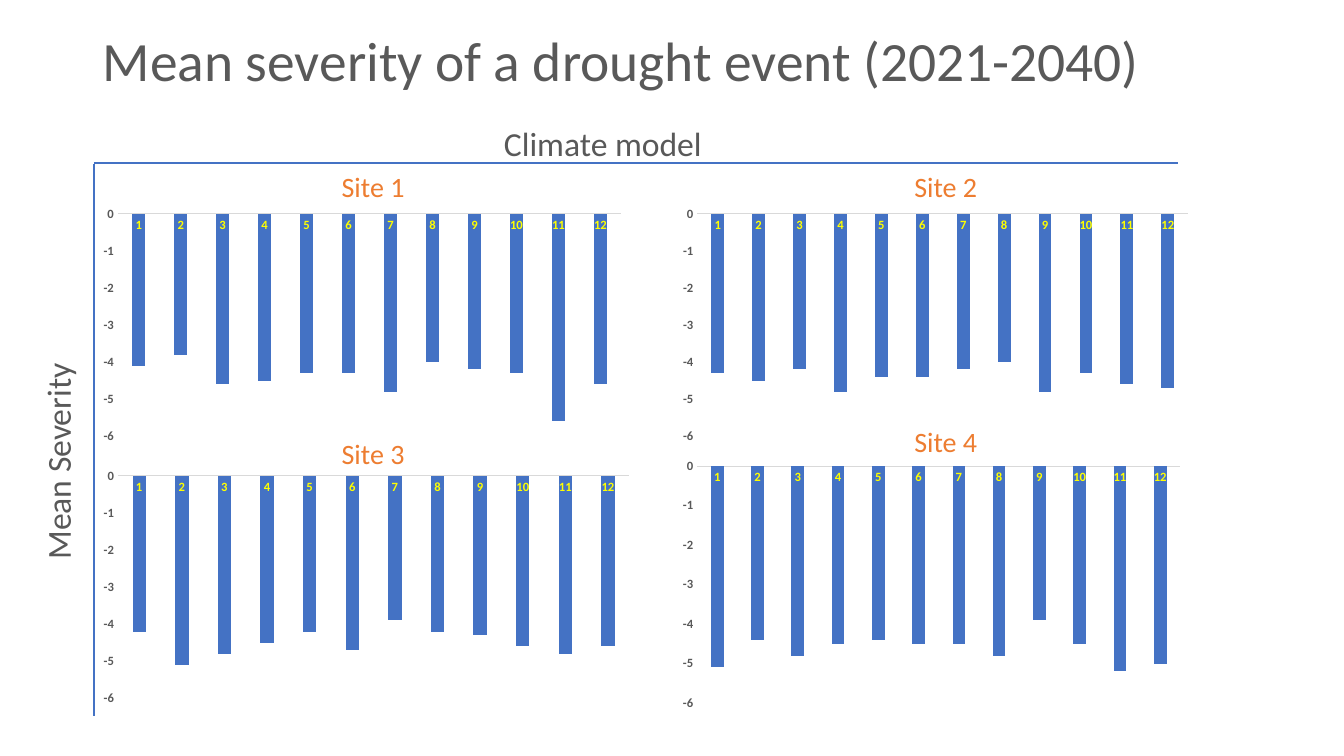
from dataclasses import dataclass

from lxml import etree
from pptx import Presentation
from pptx import util as u
from pptx.chart import data
from pptx.dml.color import RGBColor
from pptx.enum import chart as charts, shapes, text


@dataclass(frozen=True)
class Theme:
    font: str = "Calibri"
    grey: str = "595959"
    blue: str = "4472C4"
    orange: str = "ED7D31"
    yellow: str = "FFFF00"
    pale: str = "D9D9D9"
    black: str = "000000"
    title: float = 39.6
    label: float = 24
    site: float = 20
    tick: float = 9
    chart: float = 10


class Deck:
    def __init__(self, theme):
        self.theme = theme
        self.file = Presentation()
        self.file.slide_width = u.Inches(13.33)
        self.file.slide_height = u.Inches(7.5)
        self.slide = self.file.slides.add_slide(self.file.slide_layouts[5])

    def style(self, font, size, color, bold=False):
        font.name = self.theme.font
        font.size = u.Pt(size)
        font.bold = bold
        font.color.rgb = RGBColor.from_string(color)

    def add_run(self, para, words, size, color):
        run = para.add_run()
        run.text = words
        self.style(run.font, size, color)

    def title(self, box, words):
        shape = self.slide.shapes.title
        shape.left, shape.top, shape.width, shape.height = map(u.Inches, box)
        frame = shape.text_frame
        frame.auto_size = text.MSO_AUTO_SIZE.NONE
        frame.vertical_anchor = text.MSO_ANCHOR.MIDDLE
        para = frame.paragraphs[0]
        para.alignment = text.PP_ALIGN.LEFT
        para.line_spacing = 0.9
        self.add_run(para, words, self.theme.title, self.theme.grey)

    def label(self, box, words, size, color, turn=0):
        shape = self.slide.shapes.add_textbox(*map(u.Inches, box))
        shape.rotation = turn
        frame = shape.text_frame
        frame.word_wrap = True
        frame.auto_size = text.MSO_AUTO_SIZE.SHAPE_TO_FIT_TEXT
        self.add_run(frame.paragraphs[0], words, size, color)

    def line(self, *ends):
        line = self.slide.shapes.add_connector(
            shapes.MSO_CONNECTOR.STRAIGHT, *map(u.Inches, ends))
        line.line.color.rgb = RGBColor.from_string(self.theme.blue)
        line.line.width = u.Pt(1.5)
        props = line._element.spPr
        etree.SubElement(props, f"{{{props.nsmap['a']}}}effectLst")

    def chart(self, box, values):
        theme = self.theme
        table = data.CategoryChartData()
        table.categories = [str(n) for n in range(1, len(values) + 1)]
        table.add_series("Series 1", values)
        chart = self.slide.shapes.add_chart(
            charts.XL_CHART_TYPE.COLUMN_CLUSTERED,
            *map(u.Inches, box), table).chart
        self.style(chart.font, theme.chart, theme.black)
        chart.has_title = chart.has_legend = False

        # Bars
        plot = chart.plots[0]
        plot.gap_width, plot.overlap = 219, -27
        plot.vary_by_categories = False
        bars = plot.series[0]
        bars.invert_if_negative = False
        bars.format.fill.solid()
        bars.format.fill.fore_color.rgb = RGBColor.from_string(theme.blue)

        # Axes
        models, depth = chart.category_axis, chart.value_axis
        for axis, color in ((models, theme.yellow), (depth, theme.grey)):
            axis.has_major_gridlines = False
            axis.major_tick_mark = charts.XL_TICK_MARK.NONE
            axis.minor_tick_mark = charts.XL_TICK_MARK.NONE
            axis.tick_label_position = charts.XL_TICK_LABEL_POSITION.NEXT_TO_AXIS
            self.style(axis.tick_labels.font, theme.tick, color, True)
        models.format.line.color.rgb = RGBColor.from_string(theme.pale)
        models.format.line.width = u.Pt(0.75)
        depth.format.line.fill.background()
        depth.minimum_scale, depth.maximum_scale = -6, 0
        depth.major_unit = 1


def main():
    theme = Theme()
    deck = Deck(theme)
    deck.title((0.92, 0.13, 10.89, 1),
               "Mean severity of a drought event (2021-2040)")

    # Site charts: chart box, label corner, mean severity by model
    sites = [
        ((0.92, 2, 5.35, 2.45), (3.29, 1.63),
         (-4.1, -3.8, -4.6, -4.5, -4.3, -4.3, -4.8, -4, -4.2, -4.3, -5.6, -4.6)),
        ((6.67, 2, 5.22, 2.45), (8.97, 1.63),
         (-4.3, -4.5, -4.2, -4.8, -4.4, -4.4, -4.2, -4, -4.8, -4.3, -4.6, -4.7)),
        ((0.92, 4.6, 5.43, 2.45), (3.29, 4.28),
         (-4.2, -5.1, -4.8, -4.5, -4.2, -4.7, -3.9, -4.2, -4.3, -4.6, -4.8, -4.6)),
        ((6.67, 4.5, 5.14, 2.6), (8.97, 4.16),
         (-5.1, -4.4, -4.8, -4.5, -4.4, -4.5, -4.5, -4.8, -3.9, -4.5, -5.2, -5)),
    ]
    for box, _, values in sites:
        deck.chart(box, values)

    # Frame lines
    deck.line(0.93, 1.63, 0.93, 7.1)
    deck.line(0.93, 1.62, 11.68, 1.62)

    # Site names and shared axis names
    for n, (_, spot, _) in enumerate(sites, 1):
        deck.label((*spot, 3.54, 0.44), f"Site {n}", theme.site, theme.orange)
    deck.label((-1.86, 2.97, 4.86, 0.5), "Mean Severity",
               theme.label, theme.grey, 270)
    deck.label((4.9, 1.17, 3.54, 0.5), "Climate model",
               theme.label, theme.grey)

    deck.file.save("out.pptx")


if __name__ == "__main__":
    main()
